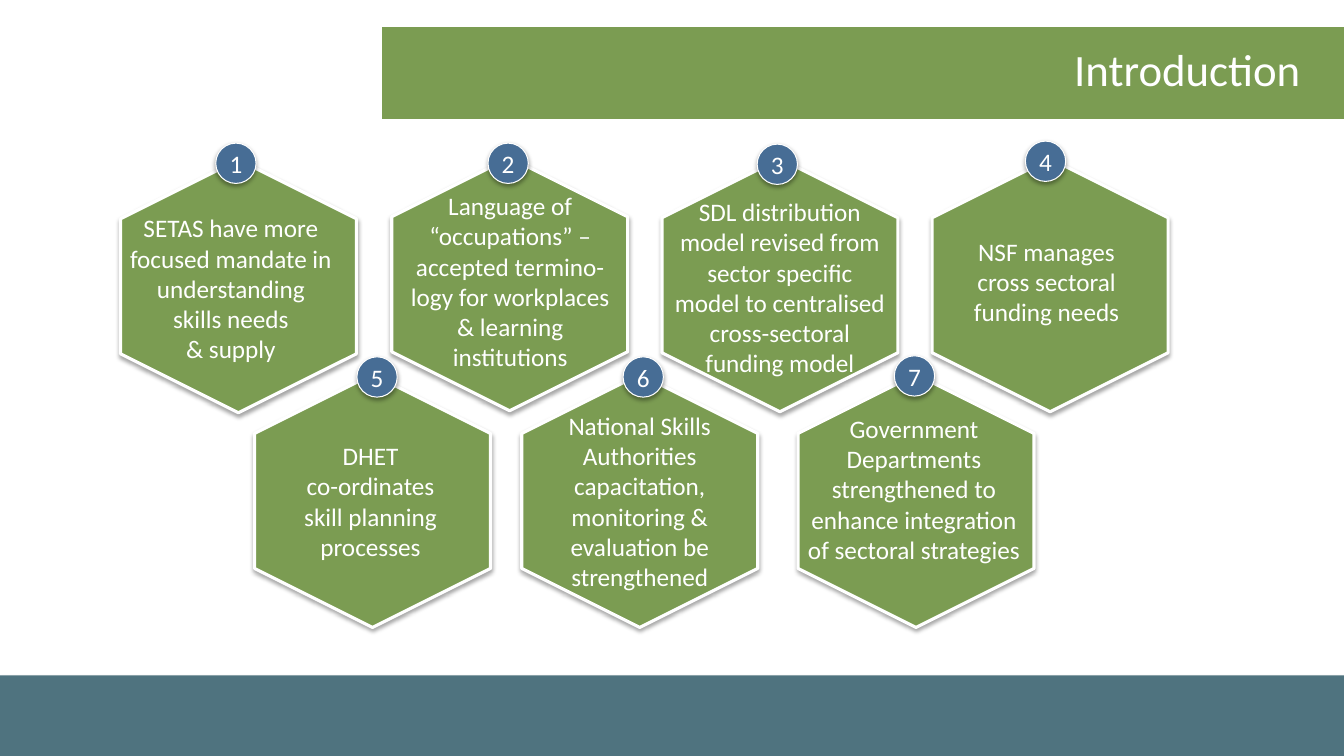
from lxml import etree
from pptx import Presentation
from pptx.dml.color import RGBColor
from pptx.enum import shapes, text
from pptx.oxml import ns
from pptx.util import Inches, Pt

GREEN, BLUE, TEAL, WHITE = "7B9C52", "476D95", "4F737F", "FFFFFF"
TITLE = "Introduction"
HEX_W, HEX_H, BADGE = 2.51, 2.34, 0.4

# hexagon left/top, badge left/top, label left/top/width/height, label
POINTS = [
    ((1.11, 1.67), (2.14, 1.42), (1.19, 2.06, 2.2, 1.62),
     "SETAS have more focused mandate in understanding skills needs\n& supply"),
    ((3.8, 1.65), (4.84, 1.42), (3.89, 1.84, 2.34, 1.92),
     "Language of “occupations” – accepted termino-logy for workplaces & learning institutions"),
    ((6.48, 1.66), (7.51, 1.43), (6.57, 1.9, 2.33, 1.92),
     "SDL distribution model revised from sector specific model to centralised "
     "cross-sectoral funding model"),
    ((9.16, 1.66), (10.17, 1.4), (9.54, 2.29, 1.68, 1.01),
     "NSF manages cross sectoral funding needs"),
    ((2.44, 3.8), (3.54, 3.54), (2.75, 4.32, 1.85, 1.31),
     "DHET\vco-ordinates skill planning processes"),
    ((5.09, 3.8), (6.18, 3.54), (5.24, 4.02, 2.21, 1.92),
     "National Skills Authorities capacitation, monitoring & evaluation be strengthened"),
    ((7.83, 3.8), (8.87, 3.53), (7.91, 4.05, 2.31, 1.62),
     "Government Departments strengthened to enhance integration of sectoral strategies"),
]


def color(value):
    return RGBColor.from_string(value)


def add_shadow(sp):
    effects = sp._element.spPr.find(ns.qn("a:effectLst"))
    outer = etree.SubElement(effects, ns.qn("a:outerShdw"), blurRad=str(Pt(3.1)),
                             dist=str(Pt(1.8)), dir="5400000", rotWithShape="0")
    black = etree.SubElement(outer, ns.qn("a:srgbClr"), val="000000")
    etree.SubElement(black, ns.qn("a:alpha"), val="35000")


def add_shape(s, kind, box, fill, line=None, shadow=True):
    sp = s.shapes.add_shape(kind, *map(Inches, box))
    sp.shadow.inherit = False
    sp.fill.solid()
    sp.fill.fore_color.rgb = color(fill)
    if line:
        sp.line.color.rgb = color(WHITE)
        sp.line.width = Pt(line)
    else:
        sp.line.fill.background()
    if shadow:
        add_shadow(sp)
    return sp


def write(sp, content, size=18, align=text.PP_ALIGN.CENTER,
          anchor=text.MSO_ANCHOR.MIDDLE, margin=None, wrap=True):
    tf = sp.text_frame
    tf.text = content
    tf.word_wrap = wrap
    tf.vertical_anchor = anchor
    if margin is not None:
        tf.margin_left = tf.margin_right = tf.margin_top = tf.margin_bottom = Inches(margin)
    for p in tf.paragraphs:
        p.alignment = align
        for r in p.runs:
            r.font.name = "Calibri"
            r.font.size = Pt(size)
            r.font.color.rgb = color(WHITE)


def main():
    prs = Presentation()
    prs.slide_width, prs.slide_height = Inches(13.33), Inches(7.5)
    s = prs.slides.add_slide(prs.slide_layouts[5])
    shape = shapes.MSO_SHAPE

    footer = add_shape(s, shape.RECTANGLE, (0, 6.7, 13.33, 0.8), TEAL)
    banner = add_shape(s, shape.RECTANGLE, (3.79, 0.27, 9.54, 0.91), GREEN, shadow=False)
    title = s.shapes.title
    title.left, title.top, title.width, title.height = map(Inches, (1, 0.06, 12, 1.25))
    write(title, TITLE, size=32, align=text.PP_ALIGN.RIGHT)
    for bar in (footer, banner):
        title._element.addprevious(bar._element)

    for corner, _, _, _ in POINTS:
        sp = add_shape(s, shape.HEXAGON, (*corner, HEX_W, HEX_H), GREEN, line=2.25)
        sp.rotation = 90
    for _, _, box, label in POINTS:
        sp = s.shapes.add_textbox(*map(Inches, box))
        write(sp, label, anchor=text.MSO_ANCHOR.TOP)
    for number, (_, corner, _, _) in enumerate(POINTS, 1):
        sp = add_shape(s, shape.OVAL, (*corner, BADGE, BADGE), BLUE, line=0.75)
        write(sp, str(number), margin=0, wrap=False)

    prs.save("out.pptx")


if __name__ == "__main__":
    main()
